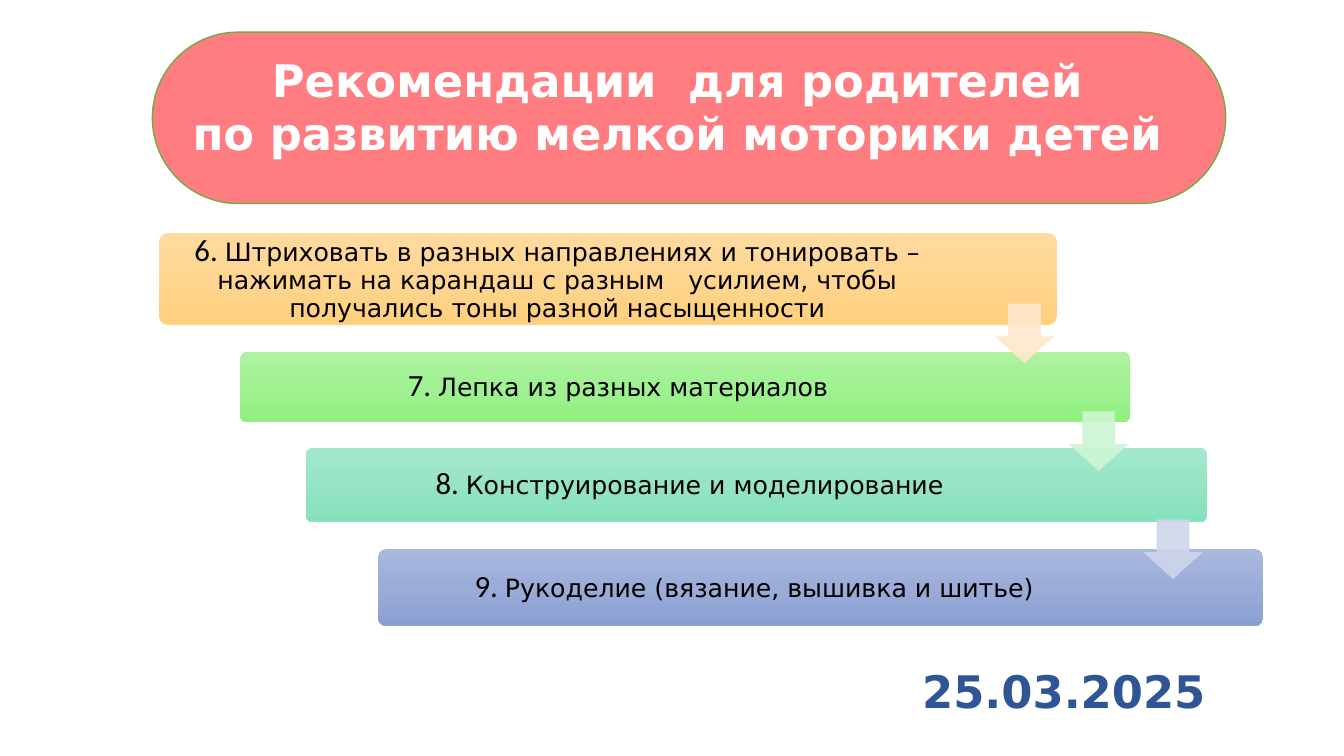
from copy import deepcopy
from dataclasses import dataclass

from lxml import etree
from pptx import Presentation
from pptx.dml.color import RGBColor
from pptx.enum.shapes import MSO_SHAPE
from pptx.enum.text import MSO_ANCHOR, MSO_AUTO_SIZE, PP_ALIGN
from pptx.oxml.ns import qn
from pptx.util import Cm, Pt

ROUNDED, DOWN_ARROW = MSO_SHAPE.ROUNDED_RECTANGLE, MSO_SHAPE.DOWN_ARROW
TOP, MIDDLE = MSO_ANCHOR.TOP, MSO_ANCHOR.MIDDLE
LEFT, CENTER = PP_ALIGN.LEFT, PP_ALIGN.CENTER
NO_FIT, GROW = MSO_AUTO_SIZE.NONE, MSO_AUTO_SIZE.SHAPE_TO_FIT_TEXT


@dataclass(frozen=True)
class Theme:
    font: str = "DejaVu Sans"
    number_font: str = "Calibri"
    heading_size: int = 32
    number_size: int = 22
    body_size: int = 18
    banner: str = "FF7C80"
    banner_line: str = "70AD47"
    title: str = "FFFFFF"
    body: str = "000000"
    date: str = "2F5597"


@dataclass(frozen=True)
class Box:
    left: float
    top: float
    width: float
    height: float

    def lengths(self):
        return [Cm(v) for v in (self.left, self.top, self.width, self.height)]


@dataclass(frozen=True)
class Step:
    text: str
    box: Box
    text_width: float
    gradient: tuple[str, str, str]


THEME = Theme()
BANNER = Box(3.84, 0.81, 27.05, 4.32)
TITLE = Box(1.22, 1.19, 31.72, 3.56)
DATE = Box(22.99, 16.59, 7.9, 1.63)
BAR_RADIUS = 0.1
FIRST_NUMBER = 6
STEPS = [
    Step("Штриховать в разных направлениях и тонировать – нажимать на карандаш "
         "с разным   усилием, чтобы получались тоны разной насыщенности",
         Box(4.01, 5.87, 22.63, 2.31), 19.94, ("FFDB9E", "FFD590", "FFD07C")),
    Step("Лепка из разных материалов",
         Box(6.05, 8.86, 22.43, 1.78), 18.95, ("ADF3A0", "A0F192", "90F07E")),
    Step("Конструирование и моделирование",
         Box(7.7, 11.28, 22.73, 1.88), 19.25, ("A4E8CC", "96E4C3", "83E1BB")),
    Step("Рукоделие (вязание, вышивка и шитье)",
         Box(9.53, 13.84, 22.3, 1.93), 18.85, ("A9B8DE", "9BACD8", "8A9FD3")),
]
ARROW_COLORS = ["FFE8CC", "CCF6D3", "CFD6EA"]
ARROW_START = Box(25.07, 7.65, 1.5, 1.5)
ARROW_DX, ARROW_DY = 1.87, 2.72


def set_all(target, values: dict) -> None:
    for name, value in values.items():
        setattr(target, name, value)


def add_run(p, text: str, size: int, font: str, color: str, bold: bool = False) -> None:
    r = p.add_run()
    r.text = text
    set_all(r.font, {"name": font, "size": Pt(size), "bold": bold})
    r.font.color.rgb = RGBColor.from_string(color)


def format_frame(tf, anchor, inset_x: float, inset_y: float, auto_size=NO_FIT) -> None:
    set_all(tf, {
        "word_wrap": True, "auto_size": auto_size, "vertical_anchor": anchor,
        "margin_left": Cm(inset_x), "margin_right": Cm(inset_x),
        "margin_top": Cm(inset_y), "margin_bottom": Cm(inset_y),
    })


def add_shape(s, kind, box: Box, *adjustments: float):
    """Add a preset shape with no shadow and no outline."""
    sp = s.shapes.add_shape(kind, *box.lengths())
    sp.shadow.inherit = False
    sp.line.fill.background()
    for i, value in enumerate(adjustments):
        sp.adjustments[i] = value
    return sp


def fill_solid(sp, color: str) -> None:
    sp.fill.solid()
    sp.fill.fore_color.rgb = RGBColor.from_string(color)


def fill_gradient(sp, colors: tuple[str, str, str]) -> None:
    """Fill from top to bottom with three evenly spaced colours."""
    sp.fill.gradient()
    sp.fill.gradient_angle = 270
    stops = sp._element.spPr.find(".//" + qn("a:gsLst"))
    stops.insert(1, deepcopy(stops[0]))
    for i, (stop, color) in enumerate(zip(sp.fill.gradient_stops, colors)):
        stop.position = i / 2
        stop.color.rgb = RGBColor.from_string(color)


def add_title(s) -> None:
    banner = add_shape(s, ROUNDED, BANNER, 0.5)
    fill_solid(banner, THEME.banner)
    banner.line.color.rgb = RGBColor.from_string(THEME.banner_line)
    banner.line.width = Pt(1)

    title = s.shapes.title
    title._element.addprevious(banner._element)
    set_all(title, dict(zip(("left", "top", "width", "height"), TITLE.lengths())))
    tf = title.text_frame
    format_frame(tf, TOP, 0.25, 0.13)
    lines = ["Рекомендации  для родителей", "по развитию мелкой моторики детей"]
    for i, line in enumerate(lines):
        p = tf.add_paragraph() if i else tf.paragraphs[0]
        p.alignment = CENTER
        add_run(p, line, THEME.heading_size, THEME.font, THEME.title, True)


def add_step(s, number: int, step: Step) -> None:
    box = step.box
    fill_gradient(add_shape(s, ROUNDED, box, BAR_RADIUS), step.gradient)

    inset = 0.29 * BAR_RADIUS * box.height
    text_box = Box(box.left + inset, box.top + inset,
                   step.text_width, box.height - 2 * inset)
    tf = s.shapes.add_textbox(*text_box.lengths()).text_frame
    format_frame(tf, MIDDLE, 0.24, 0.24)
    p = tf.paragraphs[0]
    set_all(p, {"alignment": CENTER, "line_spacing": 0.9})
    add_run(p, f"{number}. ", THEME.number_size, THEME.number_font, THEME.body)
    add_run(p, step.text, THEME.body_size, THEME.font, THEME.body)


def add_arrow(s, index: int, color: str) -> None:
    box = Box(ARROW_START.left + index * ARROW_DX, ARROW_START.top + index * ARROW_DY,
              ARROW_START.width, ARROW_START.height)
    sp = add_shape(s, DOWN_ARROW, box, 0.55, 0.45)
    fill_solid(sp, color)
    rgb = sp._element.spPr.find(qn("a:solidFill") + "/" + qn("a:srgbClr"))
    etree.SubElement(rgb, qn("a:alpha"), val="90000")


def add_date(s) -> None:
    tf = s.shapes.add_textbox(*DATE.lengths()).text_frame
    format_frame(tf, TOP, 0.25, 0.13, GROW)
    p = tf.paragraphs[0]
    p.alignment = LEFT
    add_run(p, "25.03.2025", THEME.heading_size, THEME.font, THEME.date, True)


def main() -> None:
    prs = Presentation()
    prs.slide_width, prs.slide_height = Cm(33.87), Cm(19.05)
    s = prs.slides.add_slide(prs.slide_layouts[5])
    add_title(s)
    for number, step in enumerate(STEPS, FIRST_NUMBER):
        add_step(s, number, step)
    for index, color in enumerate(ARROW_COLORS):
        add_arrow(s, index, color)
    add_date(s)
    prs.save("out.pptx")


if __name__ == "__main__":
    main()
